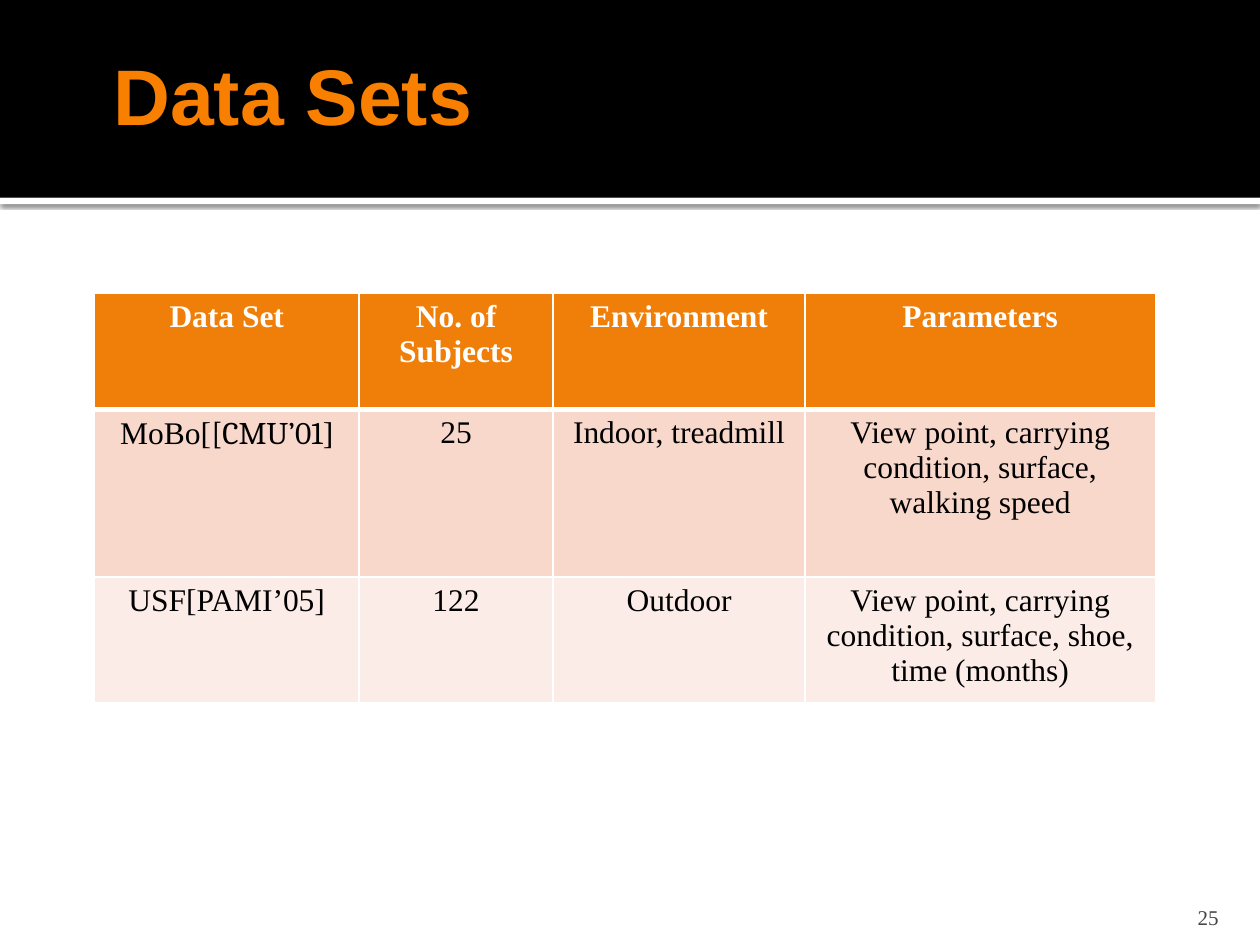
from lxml.etree import SubElement, fromstring
from pptx import Presentation
from pptx.dml.color import RGBColor as Rgb
from pptx.enum.shapes import MSO_SHAPE as Kind
from pptx.enum.text import MSO_ANCHOR as Anchor, PP_ALIGN as Align
from pptx.oxml.ns import nsdecls, qn
from pptx.util import Inches, Pt

HUES = {
    "white": "FFFFFF", "black": "000000", "title": "F97F00", "page": "454545",
    "head": "F07F09", "odd": "F9D8CC", "even": "FCECE7",
}
WIDE, HIGH = 10, 7.5
SERIF = "Times New Roman"
COLS = (2.1, 1.54, 2, 2.78)
ROWS = (0.92, 1.33, 0.93)
FILLS = ("head", "odd", "even")
CELLS = (
    ("Data Set", "No. of Subjects", "Environment", "Parameters"),
    (("MoBo[", "[CMU’01", "]"), "25", "Indoor, treadmill",
     "View point, carrying condition, surface, walking speed"),
    ("USF[PAMI’05]", "122", "Outdoor",
     "View point, carrying condition, surface, shoe, time (months)"),
)


def hue(name):
    """Return the named colour."""
    return Rgb.from_string(HUES[name])


def add_run(para, text, size, color, font=SERIF, bold=False):
    """Append one styled run to a paragraph."""
    run = para.add_run()
    run.text = text
    face = run.font
    face.name, face.size, face.bold = font, Pt(size), bold
    face.color.rgb = hue(color)


def add_band(slide, top, tall, color):
    """Draw a plain band across the whole slide."""
    band = slide.shapes.add_shape(
        Kind.RECTANGLE, 0, Inches(top), Inches(WIDE), Inches(tall))
    band.shadow.inherit = False
    band.fill.solid()
    band.fill.fore_color.rgb = hue(color)
    band.line.fill.background()
    return band


def cast(shape):
    """Give a shape a soft shadow that falls straight down."""
    glow = shape._element.spPr.find(qn("a:effectLst"))
    drop = SubElement(glow, qn("a:outerShdw"), blurRad=str(Pt(2.5)),
                      dist=str(Pt(0.8)), dir="5400000", algn="t", rotWithShape="0")
    tint = SubElement(drop, qn("a:srgbClr"), val=HUES["black"])
    SubElement(tint, qn("a:alpha"), val="60000")


def add_text(slide, box, pads, anchor, align):
    """Place a wrapped text box and return its paragraph."""
    frame = slide.shapes.add_textbox(*map(Inches, box)).text_frame
    frame.word_wrap = True
    frame.vertical_anchor = anchor
    (frame.margin_left, frame.margin_top,
     frame.margin_right, frame.margin_bottom) = map(Inches, pads)
    para = frame.paragraphs[0]
    para.alignment = align
    return para


def add_edges(cell, widths):
    """Draw white borders of the given widths around a cell."""
    props = cell._tc.get_or_add_tcPr()
    for spot, (side, width) in enumerate(zip("LRTB", widths)):
        props.insert(spot, fromstring(
            f'<a:ln{side} {nsdecls("a")} w="{Pt(width)}"><a:solidFill>'
            f'<a:srgbClr val="{HUES["white"]}"/></a:solidFill></a:ln{side}>'))


def fill_cell(cell, parts, row):
    """Write, colour and border one table cell."""
    head = row == 0
    cell.fill.solid()
    cell.fill.fore_color.rgb = hue(FILLS[row])
    para = cell.text_frame.paragraphs[0]
    para.alignment = Align.CENTER
    for part in (parts,) if isinstance(parts, str) else parts:
        font = "Cambria" if part.startswith("[") else SERIF
        add_run(para, part, 18, "white" if head else "black", font, head)
    add_edges(cell, (1, 1, 3 if row == 1 else 1, 3 if head else 1))


def add_grid(slide, left, top):
    """Build the table of data sets."""
    grid = slide.shapes.add_table(
        len(ROWS), len(COLS), Inches(left), Inches(top),
        Inches(sum(COLS)), Inches(sum(ROWS))).table
    for col, wide in zip(grid.columns, COLS):
        col.width = Inches(wide)
    for row, tall in enumerate(ROWS):
        grid.rows[row].height = Inches(tall)
        for col, parts in enumerate(CELLS[row]):
            fill_cell(grid.cell(row, col), parts, row)


def main():
    """Build and save the slide."""
    deck = Presentation()
    deck.slide_width, deck.slide_height = Inches(WIDE), Inches(HIGH)
    slide = deck.slides.add_slide(deck.slide_layouts[6])
    cast(add_band(slide, 1.57, 0.05, "white"))
    add_band(slide, 0, 1.57, "black")
    title = add_text(slide, (0.8, 0.25, 8.77, 1), (0.1, 0.05, 0.05, 0.05),
                     Anchor.MIDDLE, Align.LEFT)
    add_run(title, "Data Sets", 45, "title", "Arial", True)
    page = add_text(slide, (8.97, 7.08, 0.8, 0.3), (0.1, 0.05, 0.1, 0),
                    Anchor.BOTTOM, Align.RIGHT)
    add_run(page, "25", 12, "page")
    add_grid(slide, 0.75, 2.33)
    deck.save("out.pptx")


if __name__ == "__main__":
    main()
